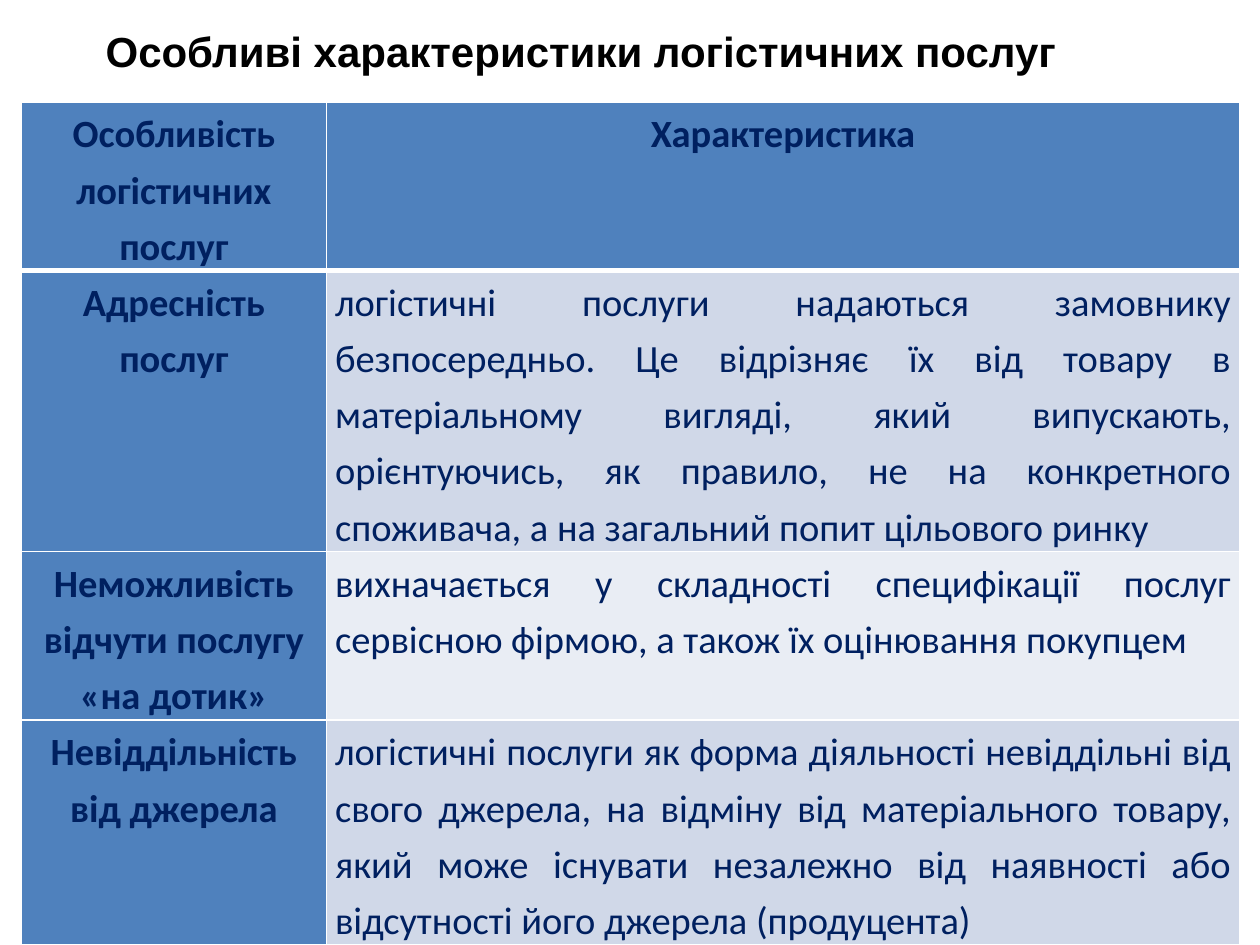
"""Build a slide with a table of the special features of logistics services."""
from dataclasses import dataclass

from lxml.etree import SubElement
from pptx import Presentation
from pptx.dml.color import RGBColor
from pptx.enum.shapes import MSO_SHAPE as Shape
from pptx.enum.text import MSO_ANCHOR as Anchor
from pptx.enum.text import MSO_AUTO_SIZE as AutoSize
from pptx.enum.text import PP_ALIGN as Align
from pptx.oxml.ns import qn
from pptx.util import Inches, Pt

BLUE, NAVY, WHITE = "4F81BD", "002060", "FFFFFF"
BANDS = ("D0D8E8", "E9EDF4")
COLUMN_WIDTHS = (2.42, 7.25)


@dataclass
class Feature:
    name: tuple[str, ...]
    description: str
    height: float


HEADER = Feature(("Особливість логістичних послуг",), "Характеристика", 1.33)
FEATURES = (
    Feature(
        ("Адресність послуг",),
        "логістичні послуги надаються замовнику безпосередньо. Це відрізняє їх "
        "від товару в матеріальному вигляді, який випускають, орієнтуючись, як "
        "правило, не на конкретного споживача, а на загальний попит цільового ринку",
        2.23,
    ),
    Feature(
        ("Неможливість відчути послугу", "«на дотик»"),
        "вихначається у складності специфікації послуг сервісною фірмою, "
        "а також їх оцінювання покупцем",
        1.33,
    ),
    Feature(
        ("Невіддільність від джерела",),
        "логістичні послуги як форма діяльності невіддільні від свого джерела, "
        "на відміну від матеріального товару, який може існувати незалежно від "
        "наявності або відсутності його джерела (продуцента)",
        1.78,
    ),
)


def paint(fill, color: str) -> None:
    fill.solid()
    fill.fore_color.rgb = RGBColor.from_string(color)


def write(frame, *lines: str, font="Calibri", size=22, color=NAVY, bold=True,
          align=Align.CENTER, spacing=1.2) -> None:
    for index, line in enumerate(lines):
        para = frame.add_paragraph() if index else frame.paragraphs[0]
        para.alignment = align
        para.line_spacing = spacing
        span = para.add_run()
        span.text = line
        span.font.name = font
        span.font.size = Pt(size)
        span.font.bold = bold
        span.font.color.rgb = RGBColor.from_string(color)


def add_borders(cell, bottom: float) -> None:
    properties = cell._tc.get_or_add_tcPr()
    widths = {"a:lnL": 1, "a:lnR": 1, "a:lnT": 1, "a:lnB": bottom}
    for position, (tag, width) in enumerate(widths.items()):
        line = SubElement(properties, qn(tag), w=str(Pt(width)))
        SubElement(SubElement(line, qn("a:solidFill")), qn("a:srgbClr"), val=WHITE)
        properties.insert(position, line)


def format_cell(cell, color: str, bottom: float = 1) -> None:
    cell.margin_left = cell.margin_right = Inches(0.07)
    cell.margin_top = cell.margin_bottom = 0
    paint(cell.fill, color)
    add_borders(cell, bottom)


def add_features(page) -> None:
    rows = (HEADER, *FEATURES)
    table = page.shapes.add_table(
        len(rows), len(COLUMN_WIDTHS), Inches(0.17), Inches(0.81),
        Inches(sum(COLUMN_WIDTHS)), Inches(sum(row.height for row in rows)),
    ).table
    for column, width in zip(table.columns, COLUMN_WIDTHS):
        column.width = Inches(width)
    for index, feature in enumerate(rows):
        table.rows[index].height = Inches(feature.height)
        name, description = table.rows[index].cells
        is_header = index == 0
        bottom = 3 if is_header else 1
        format_cell(name, BLUE, bottom)
        format_cell(description, BLUE if is_header else BANDS[(index - 1) % 2], bottom)
        write(name.text_frame, *feature.name)
        write(description.text_frame, feature.description, bold=is_header,
              align=Align.CENTER if is_header else Align.JUSTIFY)


def add_title(page, text: str) -> None:
    box = page.shapes.add_shape(
        Shape.RECTANGLE, Inches(0.25), Inches(0.15), Inches(9.33), Inches(0.5))
    box.shadow.inherit = False
    paint(box.fill, WHITE)
    box.line.fill.background()
    frame = box.text_frame
    frame.word_wrap = True
    frame.auto_size = AutoSize.SHAPE_TO_FIT_TEXT
    frame.vertical_anchor = Anchor.MIDDLE
    write(frame, text, font="Arial", size=24, color="000000", align=Align.LEFT, spacing=1.0)
    frame.paragraphs[0]._p.get_or_add_pPr().set("indent", str(Inches(0.49)))


def main() -> None:
    deck = Presentation()
    deck.slide_width, deck.slide_height = Inches(10), Inches(7.5)
    page = deck.slides.add_slide(deck.slide_layouts[6])
    add_features(page)
    add_title(page, "Особливі характеристики логістичних послуг")
    deck.save("out.pptx")


if __name__ == "__main__":
    main()
